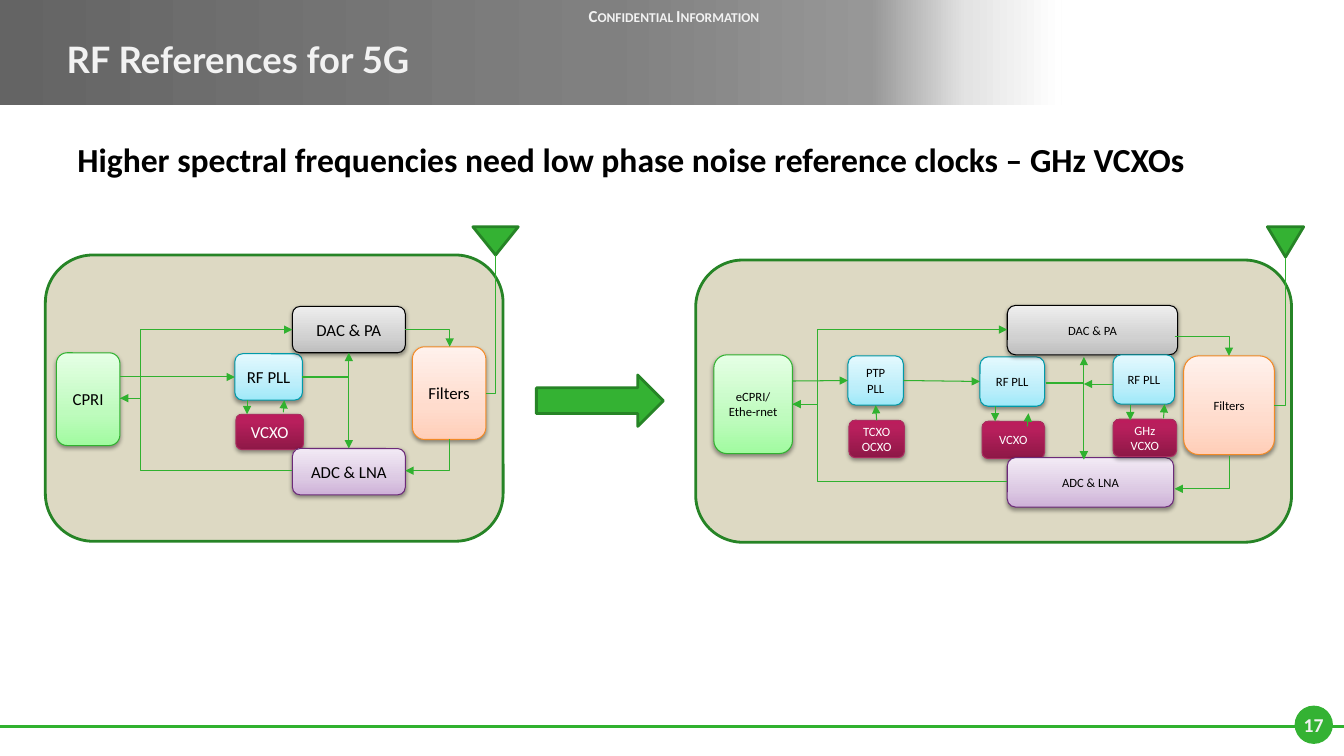
from lxml.etree import SubElement
from pptx import Presentation
from pptx.dml.color import RGBColor
from pptx.enum.shapes import MSO_CONNECTOR, MSO_SHAPE
from pptx.enum.text import MSO_ANCHOR, MSO_AUTO_SIZE, PP_ALIGN
from pptx.oxml.ns import qn
from pptx.util import Inches, Pt

COLOURS = {
    "green": "34B233", "dark green": "268426", "wire": "30B12F",
    "panel": "DDD9C3", "white": "FFFFFF", "light": "F2F2F2", "black": "000000",
}
BAND = [(0, "646464"), (57, "808080"), (82, "979797"), (91, "E3E3E3"), (100, "FFFFFF")]
# Block styles: gradient stops, outline, text colour
STYLES = {
    "port": ([(0, "A1FBA0"), (35, "BEFBBD"), (100, "E5FFE5")], "30B12F", "black"),
    "pll": ([(0, "9EE9F9"), (35, "BCEEFA"), (100, "E4F9FE")], "009AA9", "black"),
    "oscillator": ([(0, "8E1847"), (80, "B81F5C"), (100, "BC1C5C")], "AB2E60", "white"),
    "dac": ([(0, "BDBDBD"), (35, "D1D1D1"), (100, "EEEEEE")], "000000", "black"),
    "adc": ([(0, "CEB1D8"), (35, "DCC9E3"), (100, "F2EAF5")], "6C2A79", "black"),
    "filter": ([(0, "FFCEB8"), (35, "FFDCCD"), (100, "FFF1EC")], "F28A26", "black"),
}

# Blocks: key, style, text, position. Wires: shape, start, end, arrow end,
# and the blocks (with side) that a straight wire is joined to.
# Every elbow leaves its start sideways.
DIAGRAMS = [
    {
        "size": 9, "margin": 0.1,
        "antenna": (12.57, 2.25, 0.36, 0.3), "panel": (6.9, 2.58, 5.91, 2.8),
        "blocks": [
            ("port", "port", "eCPRI/Ethe-rnet", (7.08, 3.52, 0.78, 0.98)),
            ("rf", "pll", "RF PLL", (9.72, 3.54, 0.64, 0.49)),
            ("vcxo", "oscillator", "VCXO", (9.74, 4.18, 0.62, 0.37)),
            ("dac", "dac", "DAC & PA", (9.99, 3.03, 1.69, 0.49)),
            ("adc", "adc", "ADC & LNA", (9.99, 4.54, 1.65, 0.49)),
            ("filter", "filter", "Filters", (11.74, 3.53, 0.9, 0.98)),
            ("ptp", "pll", "PTP PLL", (8.41, 3.53, 0.55, 0.49)),
            ("tcxo", "oscillator", "TCXO\nOCXO", (8.42, 4.17, 0.55, 0.37)),
            ("rf 2", "pll", "RF PLL", (11.04, 3.52, 0.61, 0.49)),
            ("ghz", "oscillator", "GHz VCXO", (11.04, 4.16, 0.63, 0.37)),
        ],
        "wires": [
            ("corner", (12.64, 4.02), (12.75, 2.56), None, None, None),
            ("straight", (7.86, 3.78), (8.41, 3.78), "tail", None, ("ptp", 1)),
            ("straight", (8.96, 3.78), (9.72, 3.78), "tail", ("ptp", 3), ("rf", 1)),
            ("straight", (8.69, 4.17), (8.69, 4.02), "tail", ("tcxo", 0), ("ptp", 2)),
            ("straight", (9.87, 4.03), (9.87, 4.18), "tail", None, None),
            ("straight", (10.19, 4.23), (10.2, 4.1), "tail", None, None),
            ("straight", (11.21, 4.02), (11.21, 4.17), "tail", None, None),
            ("straight", (11.54, 4.15), (11.55, 4.01), "tail", None, None),
            ("straight", (11.04, 3.81), (10.75, 3.81), "tail", None, None),
            ("step", (7.86, 4.01), (9.99, 3.27), "tail", None, None),
            ("step", (7.86, 4.01), (9.99, 4.78), "head", None, None),
            ("corner", (11.65, 3.34), (12.19, 3.53), "tail", None, None),
            ("corner", (11.65, 4.85), (12.19, 4.52), "head", None, None),
            ("corner", (10.37, 3.8), (10.75, 3.54), "tail", None, None),
            ("corner", (10.37, 3.8), (10.75, 4.56), "tail", None, None),
        ],
    },
    {
        "size": 12, "margin": 0.05,
        "antenna": (4.69, 2.25, 0.45, 0.28), "panel": (0.45, 2.53, 4.54, 2.84),
        "blocks": [
            ("port", "port", "CPRI", (0.56, 3.5, 0.63, 0.92)),
            ("rf", "pll", "RF PLL", (2.33, 3.51, 0.67, 0.46)),
            ("vcxo", "oscillator", "VCXO", (2.34, 4.11, 0.67, 0.35)),
            ("dac", "dac", "DAC & PA", (2.9, 3.04, 1.12, 0.46)),
            ("adc", "adc", "ADC & LNA", (2.9, 4.45, 1.12, 0.46)),
            ("filter", "filter", "Filters", (4.09, 3.44, 0.73, 0.92)),
        ],
        "wires": [
            ("corner", (4.82, 3.9), (4.91, 2.53), None, None, None),
            ("straight", (1.19, 3.74), (2.33, 3.74), "tail", None, ("rf", 1)),
            ("straight", (2.45, 3.97), (2.45, 4.11), "tail", None, None),
            ("straight", (2.81, 4.09), (2.82, 3.97), "tail", None, None),
            ("step", (1.19, 3.95), (2.9, 3.27), "tail", None, None),
            ("step", (1.19, 3.95), (2.9, 4.67), "head", None, None),
            ("corner", (4.02, 3.27), (4.46, 3.44), "tail", None, None),
            ("corner", (4.02, 4.67), (4.46, 4.36), "head", None, None),
            ("corner", (3, 3.74), (3.46, 3.5), "tail", None, None),
            ("corner", (3, 3.74), (3.46, 4.45), "tail", None, None),
        ],
    },
]


def add_figure(shapes, kind, place, fill, outline=None, width=2, angle=270):
    """Add a preset shape; fill is a hex string or a list of gradient stops."""
    figure = shapes.add_shape(kind, *map(Inches, place))
    figure.shadow.inherit = False
    if isinstance(fill, str):
        figure.fill.solid()
        figure.fill.fore_color.rgb = RGBColor.from_string(fill)
    else:
        gradient = SubElement(figure._element.spPr, qn("a:gradFill"), rotWithShape="1")
        figure._element.spPr.insert(2, gradient)
        stops = SubElement(gradient, qn("a:gsLst"))
        for position, colour in fill:
            stop = SubElement(stops, qn("a:gs"), pos=str(position * 1000))
            SubElement(stop, qn("a:srgbClr"), val=colour)
        SubElement(gradient, qn("a:lin"), ang=str(angle * 60000), scaled="0")
    if outline:
        figure.line.color.rgb = RGBColor.from_string(outline)
        figure.line.width = Pt(width)
    else:
        figure.line.fill.background()
    return figure


def write_text(box, text, size, colour, bold=False, align=PP_ALIGN.CENTER,
               anchor=MSO_ANCHOR.MIDDLE, font="Calibri"):
    frame = box.text_frame
    frame.word_wrap = True
    frame.auto_size = MSO_AUTO_SIZE.NONE
    frame.vertical_anchor = anchor
    frame.text = text
    for para in frame.paragraphs:
        para.alignment = align
        para.font.name, para.font.size, para.font.bold = font, Pt(size), bold
        para.font.color.rgb = RGBColor.from_string(COLOURS[colour])
    return frame.paragraphs[0]


deck = Presentation()
deck.slide_width, deck.slide_height = Inches(13.33), Inches(7.5)
page = deck.slides.add_slide(deck.slide_layouts[5])

# Footer rule and slide number
rule = page.shapes.add_connector(
    MSO_CONNECTOR.STRAIGHT, Inches(-0.03), Inches(7.21), Inches(13.33), Inches(7.21))
rule.line.color.rgb = RGBColor.from_string(COLOURS["wire"])
rule.line.width = Pt(2.5)
SubElement(rule._element.spPr, qn("a:effectLst"))
add_figure(page.shapes, MSO_SHAPE.OVAL, (12.84, 7, 0.38, 0.38), COLOURS["green"])
number = page.shapes.add_textbox(Inches(12.7), Inches(6.99), Inches(0.66), Inches(0.4))
write_text(number, "17", 14, "light", bold=True)

# Header band, with the title brought in front of it
add_figure(page.shapes, MSO_SHAPE.RECTANGLE, (0, -0.03, 10.53, 1.07), BAND, angle=0)
title = page.shapes.title
title.left, title.top, title.width, title.height = map(Inches, (0.56, 0.21, 9.06, 0.75))
write_text(title, "RF References for 5G", 26, "light", bold=True,
           align=PP_ALIGN.LEFT, font="Lato")
page.shapes._spTree.append(title._element)
notice = page.shapes.add_textbox(Inches(5.48), Inches(-0.03), Inches(2.41), Inches(0.38))
para = write_text(notice, "Confidential Information", 12, "light", bold=True)
para.runs[0].font._element.set("cap", "small")

# Bullet
body = page.shapes.add_textbox(Inches(0.67), Inches(1.33), Inches(12), Inches(5.37))
para = body.text_frame.paragraphs[0]
properties = para._p.get_or_add_pPr()
properties.set("marL", str(Inches(0.3)))
properties.set("indent", str(Inches(-0.3)))
SubElement(SubElement(properties, qn("a:buClr")), qn("a:srgbClr"), val=COLOURS["green"])
SubElement(properties, qn("a:buSzPct"), val="70000")
SubElement(properties, qn("a:buChar"), char="•")
write_text(body, "Higher spectral frequencies need low phase noise reference clocks – GHz VCXOs",
           24, "black", bold=True, align=PP_ALIGN.LEFT, anchor=MSO_ANCHOR.TOP)

# Radio diagrams
for diagram in DIAGRAMS:
    shapes = page.shapes.add_group_shape().shapes
    antenna = add_figure(shapes, MSO_SHAPE.ISOSCELES_TRIANGLE, diagram["antenna"],
                         COLOURS["green"], COLOURS["dark green"])
    antenna.rotation = 180
    add_figure(shapes, MSO_SHAPE.ROUNDED_RECTANGLE, diagram["panel"],
               COLOURS["panel"], COLOURS["dark green"])

    blocks = {}
    for key, style, text, place in diagram["blocks"]:
        stops, outline, colour = STYLES[style]
        block = add_figure(shapes, MSO_SHAPE.ROUNDED_RECTANGLE, place, stops, outline, 0.75)
        shadow = SubElement(block._element.spPr.find(qn("a:effectLst")), qn("a:outerShdw"),
                            blurRad=str(Pt(3.1)), dist=str(Pt(1.6)), dir="5400000",
                            rotWithShape="0")
        tone = SubElement(shadow, qn("a:srgbClr"), val=COLOURS["black"])
        SubElement(tone, qn("a:alpha"), val="38000")
        write_text(block, text, diagram["size"], colour)
        block.text_frame.margin_left = block.text_frame.margin_right = Inches(diagram["margin"])
        blocks[key] = block

    for form, start, end, arrow, begin_side, end_side in diagram["wires"]:
        kind = MSO_CONNECTOR.STRAIGHT if form == "straight" else MSO_CONNECTOR.ELBOW
        wire = shapes.add_connector(kind, *map(Inches, start + end))
        geometry = wire._element.spPr.find(qn("a:prstGeom"))
        if form == "corner":
            geometry.set("prst", "bentConnector2")
        elif form == "step":
            SubElement(geometry.get_or_add_avLst(), qn("a:gd"), name="adj1", fmla="val 11700")
        if begin_side:
            wire.begin_connect(blocks[begin_side[0]], begin_side[1])
        if end_side:
            wire.end_connect(blocks[end_side[0]], end_side[1])
        wire.line.color.rgb = RGBColor.from_string(COLOURS["wire"])
        wire.line.width = Pt(0.75)
        if arrow:
            SubElement(wire.line._get_or_add_ln(), qn(f"a:{arrow}End"), type="triangle")
        SubElement(wire._element.spPr, qn("a:effectLst"))

# Arrow between the diagrams
add_figure(page.shapes, MSO_SHAPE.RIGHT_ARROW, (5.32, 3.72, 1.26, 0.51),
           COLOURS["green"], COLOURS["dark green"])

deck.save("out.pptx")
